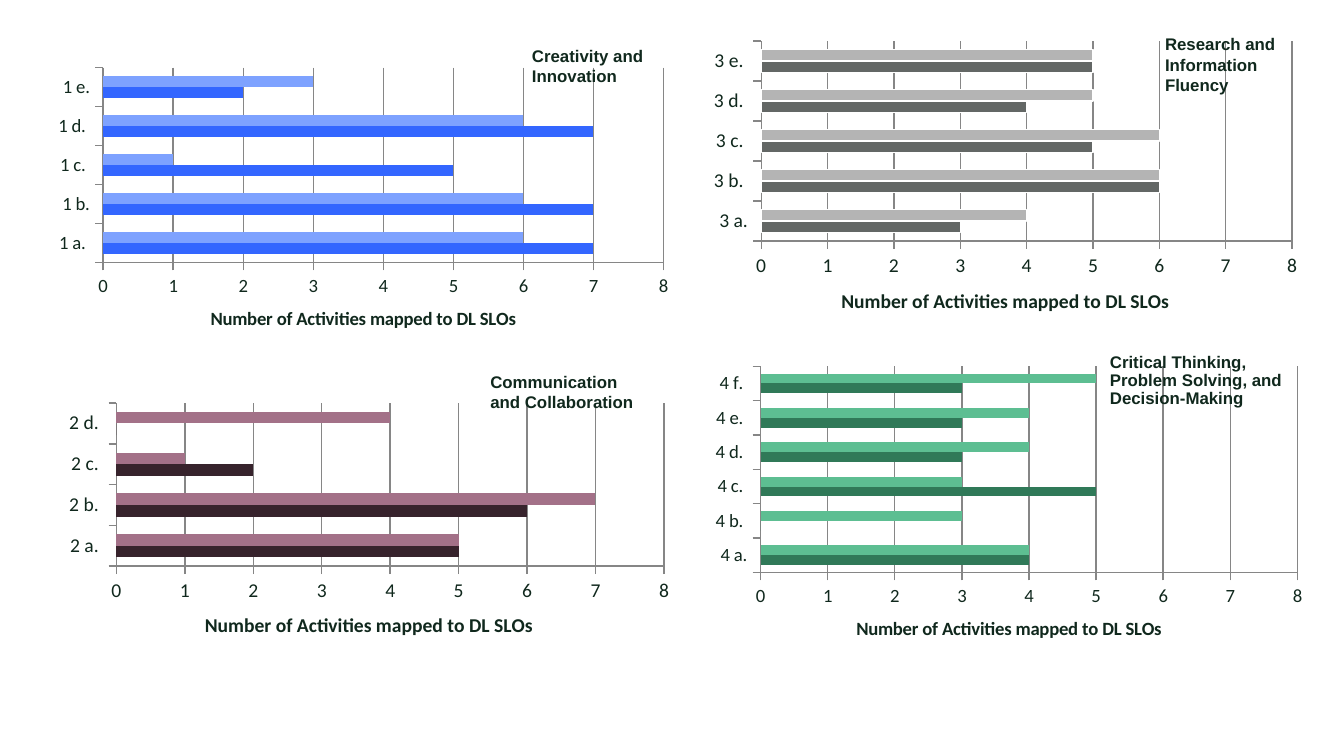
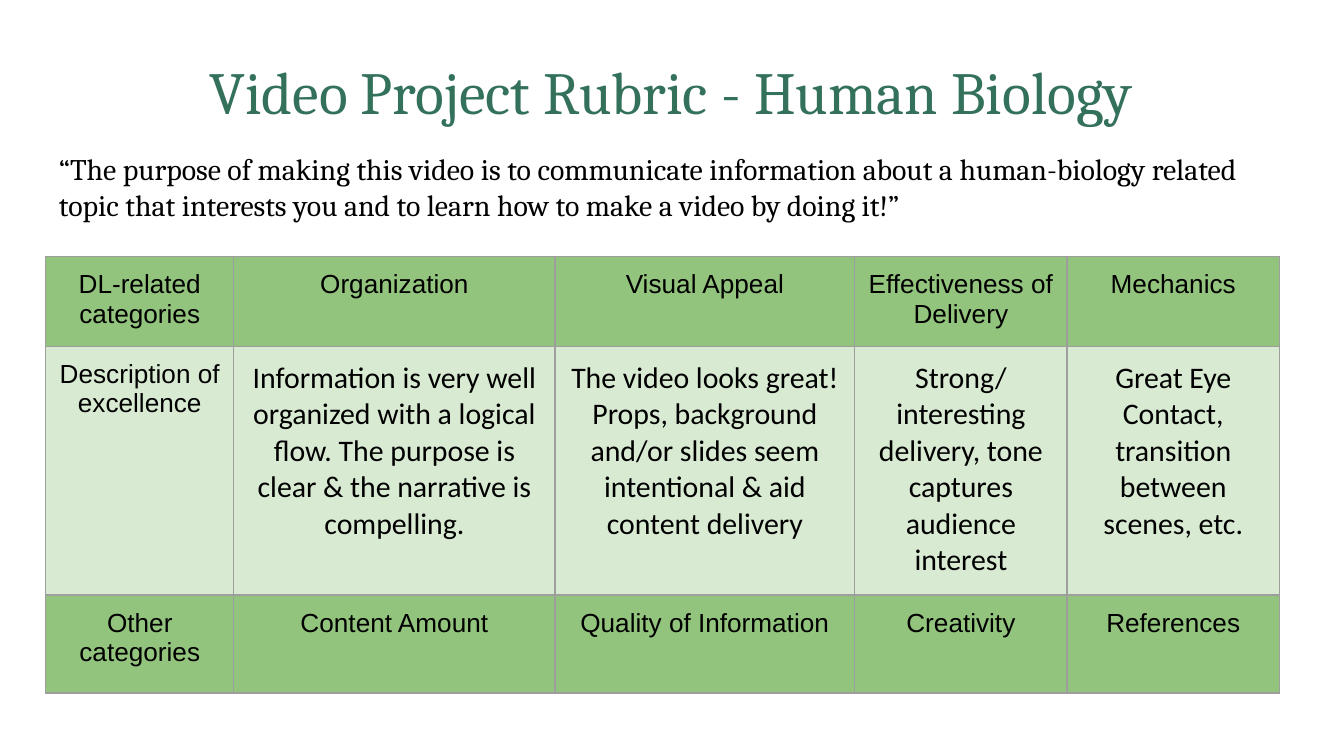
from lxml import etree
from pptx import Presentation
from pptx.chart.data import CategoryChartData
from pptx.dml.color import RGBColor
from pptx.enum.chart import XL_CHART_TYPE as ChartType, XL_TICK_MARK as TickMark
from pptx.enum.text import MSO_ANCHOR as Anchor, PP_ALIGN as Align
from pptx.oxml.ns import qn
from pptx.util import Inches, Pt

COLORS = {
    "ink": "10281D", "black": "000000", "white": "FFFFFF", "title": "33715B",
    "axis": "868686", "border": "9E9E9E", "header": "93C47D", "cell": "D9EAD3",
    "blue": "3366FF", "light blue": "7EA2FF",
    "plum": "37232C", "light plum": "A37188",
    "gray": "636765", "light gray": "B4B4B4",
    "green": "307958", "light green": "5DBE92",
}
AXIS_TITLE = "Number of Activities mapped to DL SLOs"
PLOT_TOP, PLOT_RIGHT = 0.02, 0.97


def rgb(name):
    return RGBColor.from_string(COLORS[name])


def write(frame, text, size, font="Arial", color="black", bold=False,
          align=None, spacing=None):
    paragraph = frame.paragraphs[0]
    if align is not None:
        paragraph.alignment = align
    if spacing is not None:
        paragraph.line_spacing = spacing
    run = paragraph.add_run()
    run.text = text
    run.font.size = Pt(size)
    run.font.name = font
    run.font.bold = bold
    run.font.color.rgb = rgb(color)


def set_margins(target):
    target.margin_left = target.margin_right = Inches(0.1)
    target.margin_top = target.margin_bottom = Inches(0.1)


def set_borders(cell, color, width):
    properties = cell._tc.get_or_add_tcPr()
    for side in ("lnL", "lnR", "lnT", "lnB"):
        line = etree.SubElement(properties, qn(f"a:{side}"), w=str(Pt(width)))
        fill = etree.SubElement(line, qn("a:solidFill"))
        etree.SubElement(fill, qn("a:srgbClr"), val=COLORS[color])


def place_plot(chart, left, height):
    """Fix the inner plot area, in fractions of the chart."""
    plot_area = chart._chartSpace.chart.plotArea
    for old in plot_area.findall(qn("c:layout")):
        plot_area.remove(old)
    layout = etree.Element(qn("c:layout"))
    plot_area.insert(0, layout)
    manual = etree.SubElement(layout, qn("c:manualLayout"))
    values = {"layoutTarget": "inner", "xMode": "edge", "yMode": "edge",
              "x": left, "y": PLOT_TOP, "w": round(PLOT_RIGHT - left, 2), "h": height}
    for tag, value in values.items():
        etree.SubElement(manual, qn(f"c:{tag}"), val=str(value))


class Deck:
    def __init__(self):
        self.presentation = Presentation()
        self.presentation.slide_width = Inches(10)
        self.presentation.slide_height = Inches(10) * 9 // 16
        self.slide = None

    def add_slide(self):
        self.slide = self.presentation.slides.add_slide(self.presentation.slide_layouts[6])

    def text(self, box, text, anchor=Anchor.TOP, **style):
        frame = self.slide.shapes.add_textbox(*map(Inches, box)).text_frame
        frame.word_wrap = True
        frame.vertical_anchor = anchor
        set_margins(frame)
        write(frame, text, **style)

    def bar_chart(self, box, categories, series, size, plot, outline=None):
        data = CategoryChartData()
        data.categories = categories
        for number, values in enumerate(series.values(), 1):
            data.add_series(f"Series {number}", values)
        chart = self.slide.shapes.add_chart(
            ChartType.BAR_CLUSTERED, *map(Inches, box), data).chart
        chart.has_legend = False
        chart.has_title = False
        chart.font.name = "Calibri"
        chart.font.size = Pt(size)
        chart.font.color.rgb = rgb("ink")

        bars = chart.plots[0]
        bars.gap_width = 150
        bars.overlap = 0
        bars.vary_by_categories = False
        for bar, color in zip(bars.series, series):
            bar.format.fill.solid()
            bar.format.fill.fore_color.rgb = rgb(color)
            if outline:
                bar.format.line.color.rgb = rgb(outline)
                bar.format.line.width = Pt(0.75)

        value_axis = chart.value_axis
        value_axis.minimum_scale = 0
        value_axis.maximum_scale = 8
        value_axis.major_unit = 1
        value_axis.has_major_gridlines = True
        write(value_axis.axis_title.text_frame, AXIS_TITLE, size,
              font="Calibri", color="ink", bold=True)
        for axis in (chart.category_axis, value_axis):
            axis.major_tick_mark = TickMark.OUTSIDE
        for ruled in (chart.category_axis, value_axis, value_axis.major_gridlines):
            ruled.format.line.color.rgb = rgb("axis")
            ruled.format.line.width = Pt(0.75)
        place_plot(chart, *plot)

    def table(self, box, widths, heights, rows):
        table = self.slide.shapes.add_table(
            len(rows), len(widths), *map(Inches, box)).table
        for column, width in zip(table.columns, widths):
            column.width = Inches(width)
        for row, height in zip(table.rows, heights):
            row.height = Inches(height)
        for i, texts in enumerate(rows):
            for j, text in enumerate(texts):
                cell = table.cell(i, j)
                described = i == 1
                set_margins(cell)
                set_borders(cell, "border", 0.75)
                cell.fill.solid()
                cell.fill.fore_color.rgb = rgb("cell" if described else "header")
                size, font = (16, "Calibri") if described and j else (14, "Arial")
                write(cell.text_frame, text, size, font=font, align=Align.CENTER)


def add_outcomes(deck):
    deck.add_slide()
    deck.bar_chart((5.21, 0.26, 4.54, 2.29), ["3 a.", "3 b. ", "3 c. ", "3 d. ", "3 e. "],
                   {"gray": (3, 6, 5, 4, 5), "light gray": (4, 6, 6, 5, 5)},
                   size=10.5, plot=(0.1, 0.65), outline="white")
    deck.bar_chart((0.45, 2.96, 4.63, 1.99), ["2 a. ", "2 b. ", "2 c. ", "2 d. "],
                   {"plum": (5, 6, 2, 0), "light plum": (5, 7, 1, 4)},
                   size=10.5, plot=(0.09, 0.61))
    deck.bar_chart((0.34, 0.46, 4.74, 2.23), ["1 a. ", "1 b.", "1 c. ", "1 d. ", "1 e."],
                   {"blue": (7, 7, 5, 7, 2), "light blue": (6, 6, 1, 6, 3)},
                   size=10, plot=(0.09, 0.65))
    deck.bar_chart((5.25, 2.68, 4.54, 2.29),
                   ["4 a.", "4 b. ", "4 c. ", "4 d. ", "4 e. ", "4 f. "],
                   {"green": (4, 0, 5, 3, 3, 3), "light green": (4, 3, 3, 4, 4, 5)},
                   size=10, plot=(0.09, 0.67))

    label = {"size": 9, "color": "ink", "bold": True}
    deck.text((3.86, 0.24, 1.22, 0.48), "Creativity and Innovation", **label)
    label["anchor"] = Anchor.MIDDLE
    deck.text((3.55, 2.55, 1.31, 0.73), "Communication and Collaboration", **label)
    deck.text((8.57, 0.18, 1.22, 0.6), "Research and Information Fluency", **label)
    deck.text((8.16, 2.47, 1.59, 0.73),
              "Critical Thinking, Problem Solving, and Decision-Making",
              spacing=0.9, **label)


def add_rubric(deck):
    deck.add_slide()
    deck.text((0.31, 0.31, 9.37, 0.63), "Video Project Rubric - Human Biology",
              size=32, font="Cambria", color="title", align=Align.CENTER)
    deck.text((0.34, 1.02, 9.32, 0.8),
              "“The purpose of making this video is to communicate information about a "
              "human-biology related topic that interests you and to learn how to make "
              "a video by doing it!”", size=16, font="Cambria")
    deck.table((0.34, 1.91, 9.18, 3.24), (1.4, 2.39, 2.23, 1.58, 1.58), (0.66, 1.85, 0.73), [
        ["DL-related categories", "Organization", "Visual Appeal",
         "Effectiveness of Delivery", "Mechanics"],
        ["Description of excellence",
         "Information is very well organized with a logical flow. The purpose is clear "
         "& the narrative is compelling.",
         "The video looks great! Props, background and/or slides seem intentional "
         "& aid content delivery",
         "Strong/interesting delivery, tone captures audience interest",
         "Great Eye Contact, transition between scenes, etc."],
        ["Other categories", "Content Amount", "Quality of Information",
         "Creativity", "References"],
    ])


def main():
    deck = Deck()
    add_outcomes(deck)
    add_rubric(deck)
    deck.presentation.save("out.pptx")


if __name__ == "__main__":
    main()
